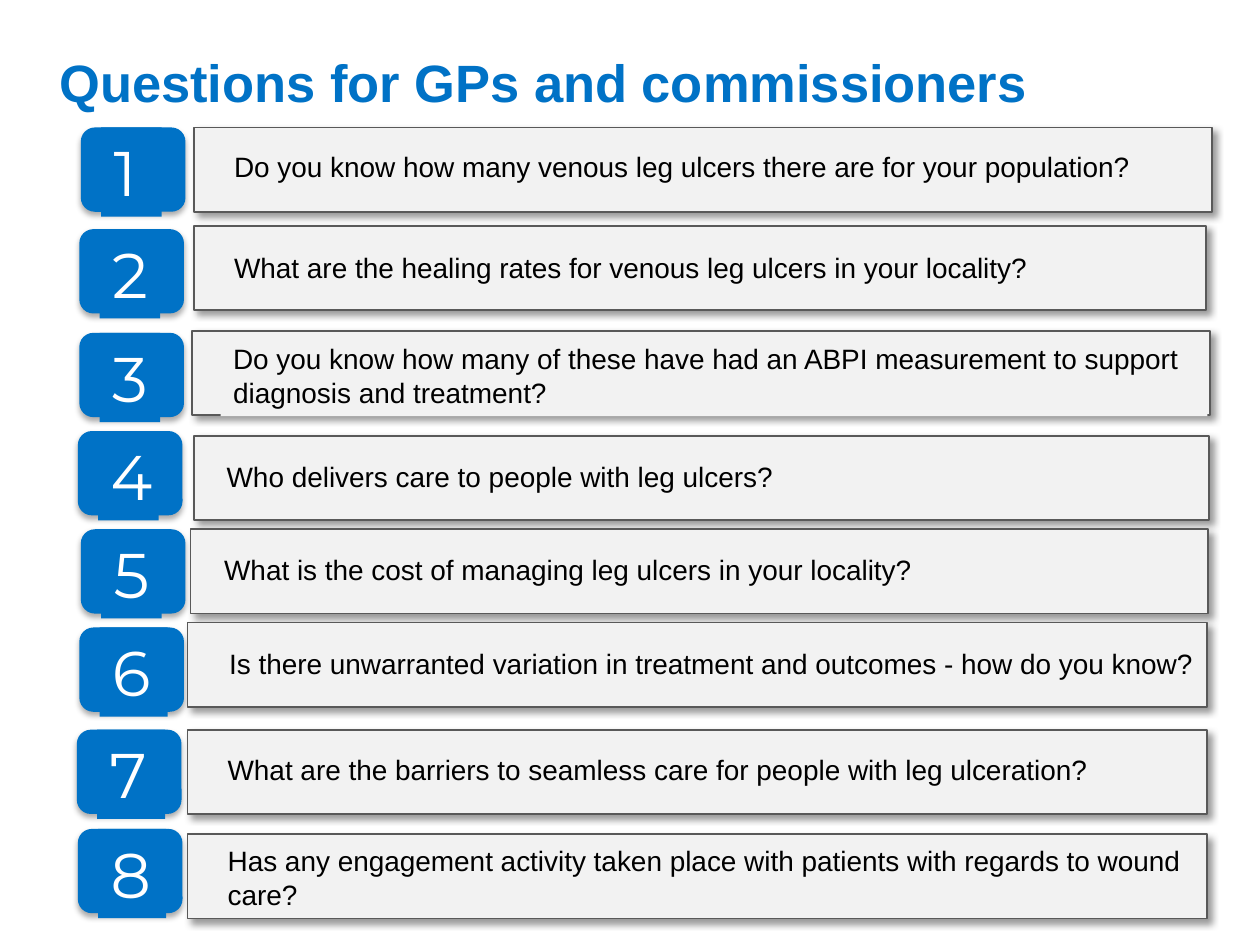
from dataclasses import dataclass
from typing import NamedTuple

from lxml.etree import SubElement
from pptx import Presentation
from pptx.dml.color import RGBColor
from pptx.enum.shapes import MSO_SHAPE
from pptx.enum.text import MSO_ANCHOR, MSO_AUTO_SIZE, PP_ALIGN
from pptx.oxml.ns import qn
from pptx.util import Cm, Pt


@dataclass(frozen=True)
class Theme:
    blue: RGBColor = RGBColor(0x00, 0x72, 0xC6)
    grey: RGBColor = RGBColor(0xF2, 0xF2, 0xF2)
    edge: RGBColor = RGBColor(0x59, 0x59, 0x59)
    white: RGBColor = RGBColor(0xFF, 0xFF, 0xFF)
    black: RGBColor = RGBColor(0, 0, 0)
    body: str = "Arial"
    digit: str = "Montserrat"
    title_size: int = 30
    digit_size: int = 36
    body_size: int = 16


class Shade(NamedTuple):
    alpha: int
    blur: float
    dist: float
    angle: int


class Row(NamedTuple):
    """One question; lengths in cm, text_x and text_y are offsets from the bar."""
    text: str
    badge_x: float
    badge_y: float
    bar_x: float
    bar_y: float
    bar_w: float
    text_x: float
    text_y: float
    text_w: float
    lines: int = 1
    solid: bool = False


THEME = Theme()
HEIGHT = 1.7
BADGE_SHADE = Shade(32, 3.5, 2.2, 90)
BAR_SHADE = Shade(40, 4, 3, 45)
ROWS = [
    Row("Do you know how many venous leg ulcers there are for your population?",
        1.63, 2.57, 3.91, 2.57, 20.52, 0.56, 0.33, 19.89),
    Row("What are the healing rates for venous leg ulcers in your locality?",
        1.6, 4.62, 3.91, 4.55, 20.4, 0.56, 0.38, 19.71, solid=True),
    Row("Do you know how many of these have had an ABPI measurement to support "
        "diagnosis and treatment?",
        1.6, 6.71, 3.87, 6.67, 20.52, 0.58, 0.09, 19.89, lines=2, solid=True),
    Row("Who delivers care to people with leg ulcers?",
        1.57, 8.69, 3.91, 8.79, 20.47, 0.41, 0.35, 20.09),
    Row("What is the cost of managing leg ulcers in your locality?",
        1.63, 10.67, 3.84, 10.67, 20.52, 0.43, 0.35, 20.04, solid=True),
    Row("Is there unwarranted variation in treatment and outcomes - how do you know?",
        1.6, 12.65, 3.78, 12.55, 20.55, 0.59, 0.35, 20.02),
    Row("What are the barriers to seamless care for people with leg ulceration?",
        1.55, 14.71, 3.78, 14.71, 20.55, 0.56, 0.33, 19.99),
    Row("Has any engagement activity taken place with patients with regards to "
        "wound care?",
        1.57, 16.71, 3.78, 16.82, 20.55, 0.56, 0.07, 19.99, lines=2),
]


def paint(shape, color: RGBColor) -> None:
    shape.fill.solid()
    shape.fill.fore_color.rgb = color


def style(para, size: int, name: str, color: RGBColor, bold: bool = False) -> None:
    para.font.size = Pt(size)
    para.font.name = name
    para.font.color.rgb = color
    para.font.bold = bold


def cast(shape, shade: Shade) -> None:
    """Give the shape an outer shadow."""
    shape.shadow.inherit = False
    effects = shape._element.spPr.find(qn("a:effectLst"))
    outer = SubElement(effects, qn("a:outerShdw"), blurRad=str(Pt(shade.blur)),
                       dist=str(Pt(shade.dist)), dir=str(shade.angle * 60000),
                       algn="tl", rotWithShape="0")
    tint = SubElement(outer, qn("a:srgbClr"), val="000000")
    SubElement(tint, qn("a:alpha"), val=str(shade.alpha * 1000))


def add_text(slide, text: str, x: float, y: float, w: float, h: float, wrap: bool):
    box = slide.shapes.add_textbox(Cm(x), Cm(y), Cm(w), Cm(h))
    box.text_frame.word_wrap = wrap
    box.text_frame.auto_size = MSO_AUTO_SIZE.SHAPE_TO_FIT_TEXT
    box.text_frame.text = text
    return box


def add_badge(slide, num: int, row: Row) -> None:
    x, y = row.badge_x, row.badge_y
    tile = slide.shapes.add_shape(MSO_SHAPE.ROUNDED_RECTANGLE,
                                  Cm(x), Cm(y), Cm(2.11), Cm(HEIGHT))
    paint(tile, THEME.blue)
    tile.line.fill.background()
    cast(tile, BADGE_SHADE)
    width = 1.22 if num < 6 else 1.37
    box = add_text(slide, str(num), x + 0.41, y, width, 1.8, wrap=False)
    paint(box, THEME.blue)
    style(box.text_frame.paragraphs[0], THEME.digit_size, THEME.digit, THEME.white)


def add_bar(slide, row: Row) -> None:
    bar = slide.shapes.add_shape(MSO_SHAPE.RECTANGLE, Cm(row.bar_x), Cm(row.bar_y),
                                 Cm(row.bar_w), Cm(HEIGHT))
    paint(bar, THEME.grey)
    bar.line.color.rgb = THEME.edge
    bar.line.width = Pt(1)
    cast(bar, BAR_SHADE)
    box = add_text(slide, row.text, row.bar_x + row.text_x, row.bar_y + row.text_y,
                   row.text_w, 0.25 + 0.69 * row.lines, wrap=True)
    if row.solid:
        paint(box, THEME.grey)
    style(box.text_frame.paragraphs[0], THEME.body_size, THEME.body, THEME.black)


def add_title(slide, text: str) -> None:
    title = slide.shapes.title
    title.left, title.top, title.width, title.height = Cm(0.94), Cm(0.71), Cm(20.65), Cm(1.85)
    frame = title.text_frame
    frame.text = text
    frame.auto_size = MSO_AUTO_SIZE.NONE
    frame.vertical_anchor = MSO_ANCHOR.MIDDLE
    para = frame.paragraphs[0]
    para.alignment = PP_ALIGN.LEFT
    style(para, THEME.title_size, THEME.body, THEME.blue, bold=True)


def main() -> None:
    deck = Presentation()
    deck.slide_width, deck.slide_height = Cm(25.4), Cm(19.05)
    slide = deck.slides.add_slide(deck.slide_layouts[5])
    add_title(slide, "Questions for GPs and commissioners")
    for num, row in enumerate(ROWS, 1):
        add_badge(slide, num, row)
        add_bar(slide, row)
    deck.save("out.pptx")


if __name__ == "__main__":
    main()
